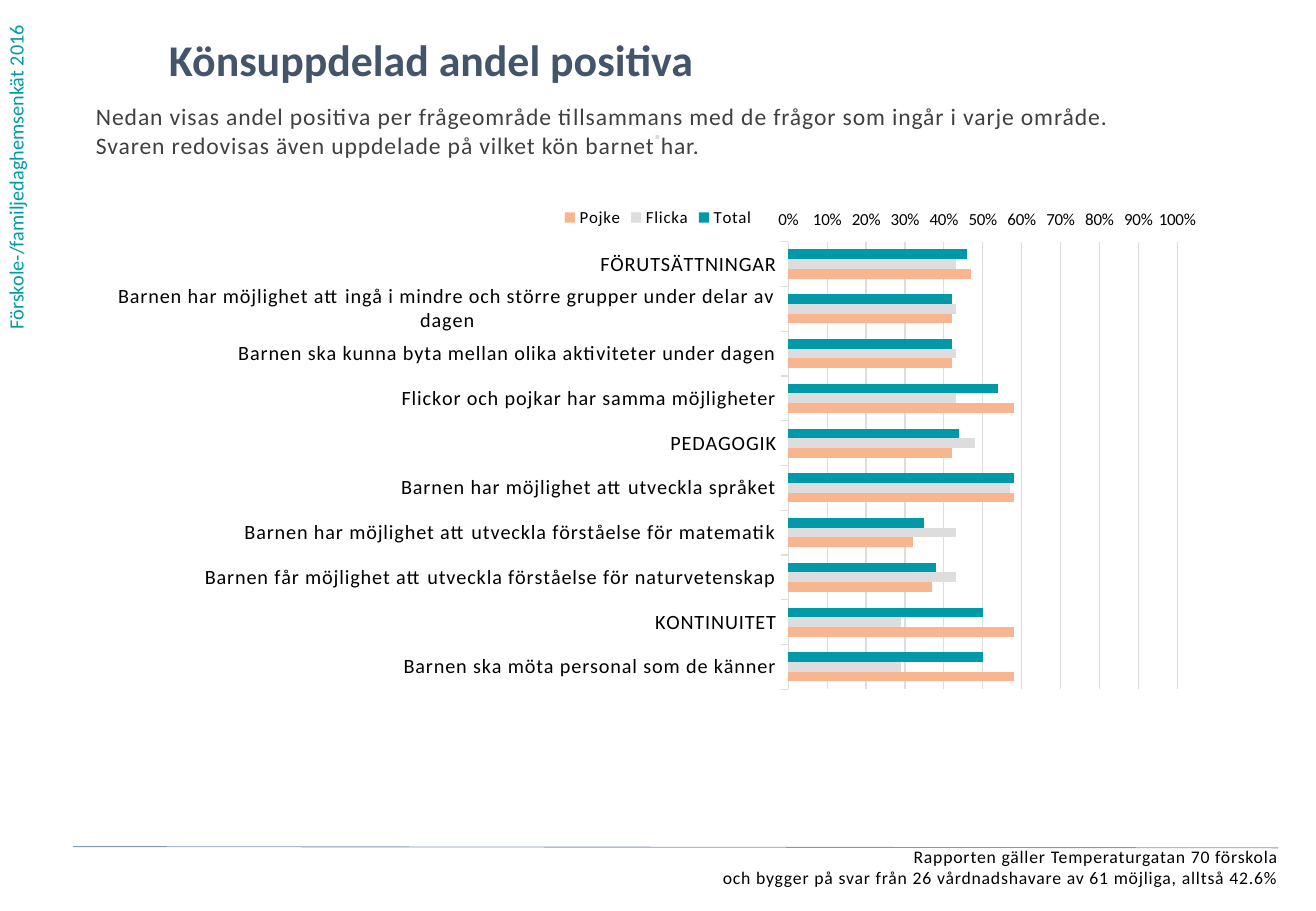
from dataclasses import dataclass

from lxml.etree import SubElement
from pptx import Presentation
from pptx.chart.chart import Chart
from pptx.chart.data import CategoryChartData
from pptx.dml.color import RGBColor
from pptx.enum.chart import XL_AXIS_CROSSES, XL_CHART_TYPE, XL_LEGEND_POSITION, XL_TICK_MARK
from pptx.enum.shapes import MSO_CONNECTOR
from pptx.enum.text import PP_ALIGN
from pptx.oxml.ns import qn
from pptx.slide import Slide
from pptx.util import Emu, Pt

TEAL = RGBColor(0x00, 0x9B, 0xA4)
NAVY = RGBColor(0x44, 0x54, 0x6A)
DARK = RGBColor(0x40, 0x40, 0x40)
BLACK = RGBColor(0x00, 0x00, 0x00)
PALE = RGBColor(0xD2, 0xD9, 0xE2)
RULE = RGBColor(0x84, 0x97, 0xB0)
TOTAL = RGBColor(0x00, 0x99, 0xAA)
GRAY = RGBColor(0xDD, 0xDD, 0xDD)
PEACH = RGBColor(0xF9, 0xB5, 0x90)
FONT = "Calibri"
SPACING = "50"


def px(n: int) -> Emu:
    return Emu(n * 9144)


@dataclass
class Label:
    x: int
    y: int
    w: int
    h: int
    text: str
    size: float
    color: RGBColor
    bold: bool = False
    spaced: bool = True
    align: PP_ALIGN = PP_ALIGN.LEFT
    vertical: bool = False


@dataclass
class Series:
    name: str
    color: RGBColor
    values: tuple[float, ...]


LABELS = [
    Label(-2, 0, 40, 281, "Förskole-/familjedaghemsenkät 2016", 12, TEAL,
          spaced=False, vertical=True),
    Label(139, 27, 834, 57, "Könsuppdelad andel positiva", 26, NAVY, bold=True, spaced=False),
    Label(79, 84, 946, 101,
          "Nedan visas andel positiva per frågeområde tillsammans med de frågor som ingår i varje område.\n"
          "Svaren redovisas även uppdelade på vilket kön barnet har.", 14, DARK),
    Label(12, 696, 1040, 43,
          "Rapporten gäller Temperaturgatan 70 förskola\n"
          "och bygger på svar från 26 vårdnadshavare av 61 möjliga, alltså 42.6%",
          10.5, BLACK, align=PP_ALIGN.RIGHT),
    Label(387, 102, 308, 39, "⋅", 12, PALE, bold=True, align=PP_ALIGN.CENTER),
]

CATEGORIES = [
    "FÖRUTSÄTTNINGAR",
    "Barnen har möjlighet att ingå i mindre och större grupper under delar av dagen",
    "Barnen ska kunna byta mellan olika aktiviteter under dagen",
    "Flickor och pojkar har samma möjligheter",
    "PEDAGOGIK",
    "Barnen har möjlighet att utveckla språket",
    "Barnen har möjlighet att utveckla förståelse för matematik",
    "Barnen får möjlighet att utveckla förståelse för naturvetenskap",
    "KONTINUITET",
    "Barnen ska möta personal som de känner",
]

SERIES = [
    Series("Total", TOTAL, (0.46, 0.42, 0.42, 0.54, 0.44, 0.58, 0.35, 0.38, 0.5, 0.5)),
    Series("Flicka", GRAY, (0.43, 0.43, 0.43, 0.43, 0.48, 0.57, 0.43, 0.43, 0.29, 0.29)),
    Series("Pojke", PEACH, (0.47, 0.42, 0.42, 0.58, 0.42, 0.58, 0.32, 0.37, 0.58, 0.58)),
]

PLOT_LAYOUT = {"layoutTarget": "inner", "xMode": "edge", "yMode": "edge",
               "x": "0.616", "y": "0.088", "w": "0.346", "h": "0.832"}


def add_label(s: Slide, label: Label) -> None:
    sp = s.shapes.add_textbox(px(label.x), px(label.y), px(label.w), px(label.h))
    tf = sp.text_frame
    tf.word_wrap = True
    tf.text = label.text
    if label.vertical:
        tf._txBody.bodyPr.set("vert", "vert270")
    else:
        tf.margin_left = tf.margin_top = tf.margin_right = tf.margin_bottom = 0
    for p in tf.paragraphs:
        p.alignment = label.align
        for r in p.runs:
            r.font.name = FONT
            r.font.size = Pt(label.size)
            r.font.bold = label.bold
            r.font.color.rgb = label.color
            if label.spaced:
                r._r.get_or_add_rPr().set("spc", SPACING)


def set_plot_layout(chart: Chart) -> None:
    plot_area = chart.element.xpath(".//c:plotArea")[0]
    for old in plot_area.findall(qn("c:layout")):
        plot_area.remove(old)
    layout = SubElement(plot_area, qn("c:layout"))
    plot_area.insert(0, layout)
    manual = SubElement(layout, qn("c:manualLayout"))
    for tag, value in PLOT_LAYOUT.items():
        SubElement(manual, qn(f"c:{tag}")).set("val", value)


def add_bar_chart(s: Slide) -> None:
    data = CategoryChartData(number_format="0%")
    data.categories = CATEGORIES
    for series in SERIES:
        data.add_series(series.name, series.values)
    chart = s.shapes.add_chart(XL_CHART_TYPE.BAR_CLUSTERED, px(79), px(160),
                               px(925), px(443), data).chart
    chart.has_title = False
    chart.font.name = FONT
    chart.font.size = Pt(10)
    chart.font.color.rgb = BLACK

    chart.has_legend = True
    chart.legend.position = XL_LEGEND_POSITION.TOP
    chart.legend.include_in_layout = False
    chart.legend.font.size = Pt(10)

    plot = chart.plots[0]
    plot.gap_width = 162
    plot.vary_by_categories = False
    for bars, series in zip(plot.series, SERIES):
        bars.format.fill.solid()
        bars.format.fill.fore_color.rgb = series.color

    cat = chart.category_axis
    cat.reverse_order = True
    cat.crosses = XL_AXIS_CROSSES.MAXIMUM
    cat.major_tick_mark = XL_TICK_MARK.OUTSIDE
    cat.tick_labels.font.size = Pt(12)

    val = chart.value_axis
    val.minimum_scale = 0
    val.maximum_scale = 1
    val.major_unit = 0.1
    val.major_tick_mark = XL_TICK_MARK.OUTSIDE
    val.has_major_gridlines = True
    val.tick_labels.font.size = Pt(10)
    val.tick_labels.number_format = "0%;0%"
    val.tick_labels.number_format_is_linked = False
    val.format.line.fill.background()

    for line in (cat.format.line, val.major_gridlines.format.line):
        line.color.rgb = GRAY
        line.width = Pt(0.75)
    for props in chart.element.xpath(".//c:legend//a:defRPr | .//c:catAx//a:defRPr"):
        props.set("spc", SPACING)
    set_plot_layout(chart)


def add_footer_rule(s: Slide) -> None:
    rule = s.shapes.add_connector(MSO_CONNECTOR.STRAIGHT, px(60), px(697), px(1052), px(698))
    rule.line.color.rgb = RULE
    rule.line.width = Pt(0.5)
    SubElement(rule._element.spPr, qn("a:effectLst"))


def main() -> None:
    prs = Presentation()
    prs.slide_width, prs.slide_height = px(1083), px(750)
    s = prs.slides.add_slide(prs.slide_layouts[6])
    for label in LABELS:
        add_label(s, label)
    add_bar_chart(s)
    add_footer_rule(s)
    prs.save("out.pptx")


if __name__ == "__main__":
    main()
